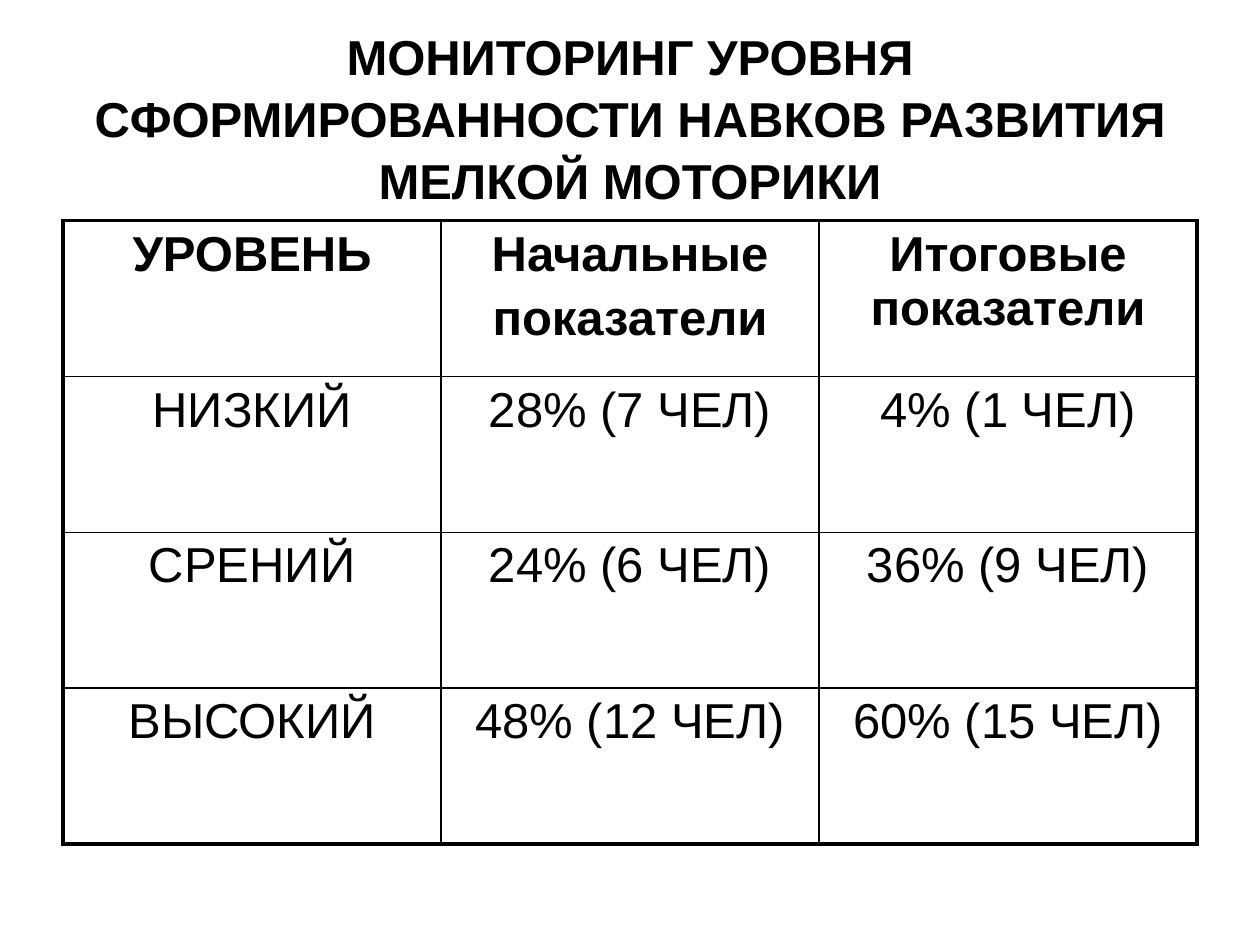
"""Build a slide with a table of fine motor skill monitoring results."""
import pptx
import pptx.dml.color
import pptx.enum.text
import pptx.oxml
import pptx.oxml.ns
import pptx.util

Inches, Pt = pptx.util.Inches, pptx.util.Pt
BLACK = pptx.dml.color.RGBColor(0, 0, 0)
WHITE = pptx.dml.color.RGBColor(255, 255, 255)
CENTER = pptx.enum.text.PP_ALIGN.CENTER
OUTER, INNER = Pt(2.25), Pt(1)

HEADING = [
    "МОНИТОРИНГ УРОВНЯ СФОРМИРОВАННОСТИ НАВКОВ РАЗВИТИЯ",
    "МЕЛКОЙ МОТОРИКИ",
]
LEVELS = [
    (["УРОВЕНЬ"], ["Начальные", "показатели"], ["Итоговые показатели"]),
    (["НИЗКИЙ"], ["28% (7 ЧЕЛ)"], ["4% (1 ЧЕЛ)"]),
    (["СРЕНИЙ"], ["24% (6 ЧЕЛ)"], ["36% (9 ЧЕЛ)"]),
    (["ВЫСОКИЙ"], ["48% (12 ЧЕЛ)"], ["60% (15 ЧЕЛ)"]),
]


def add_run(paragraph, words, bold):
    run = paragraph.add_run()
    run.text = words
    run.font.name = "Arial"
    run.font.size = Pt(28)
    run.font.bold = bold
    run.font.color.rgb = BLACK


def add_borders(cell, edges):
    properties = cell._tc.get_or_add_tcPr()
    for position, (side, on_outside) in enumerate(edges.items()):
        width = OUTER if on_outside else INNER
        border = pptx.oxml.parse_xml(
            f'<a:ln{side} {pptx.oxml.ns.nsdecls("a")} w="{int(width)}">'
            f'<a:solidFill><a:srgbClr val="{BLACK}"/></a:solidFill></a:ln{side}>'
        )
        properties.insert(position, border)


def add_heading(slide):
    heading = slide.shapes.title
    heading.left, heading.top = Inches(0.5), Inches(0.3)
    heading.width, heading.height = Inches(9), Inches(1.25)
    frame = heading.text_frame
    frame.word_wrap = True
    frame.auto_size = pptx.enum.text.MSO_AUTO_SIZE.NONE
    frame.vertical_anchor = pptx.enum.text.MSO_ANCHOR.MIDDLE
    paragraph = frame.paragraphs[0]
    paragraph.alignment = CENTER
    paragraph.line_spacing = 1.05
    for index, line in enumerate(HEADING):
        if index:
            paragraph.add_line_break()
        add_run(paragraph, line, True)


def add_levels(slide):
    last_row, last_column = len(LEVELS) - 1, len(LEVELS[0]) - 1
    levels = slide.shapes.add_table(
        len(LEVELS), len(LEVELS[0]),
        Inches(0.5), Inches(1.75), Inches(9), Inches(4.95),
    ).table
    levels.first_row = levels.horz_banding = False
    for row, entries in enumerate(LEVELS):
        for column, lines in enumerate(entries):
            cell = levels.cell(row, column)
            cell.fill.solid()
            cell.fill.fore_color.rgb = WHITE
            add_borders(cell, {
                "L": column == 0, "R": column == last_column,
                "T": row == 0, "B": row == last_row,
            })
            frame = cell.text_frame
            for index, line in enumerate(lines):
                paragraph = frame.add_paragraph() if index else frame.paragraphs[0]
                paragraph.alignment = CENTER
                paragraph.space_before = Pt(5.6)
                add_run(paragraph, line, row == 0)


def main():
    presentation = pptx.Presentation()
    presentation.slide_width, presentation.slide_height = Inches(10), Inches(7.5)
    slide = presentation.slides.add_slide(presentation.slide_layouts[5])
    add_heading(slide)
    add_levels(slide)
    presentation.save("out.pptx")


if __name__ == "__main__":
    main()
